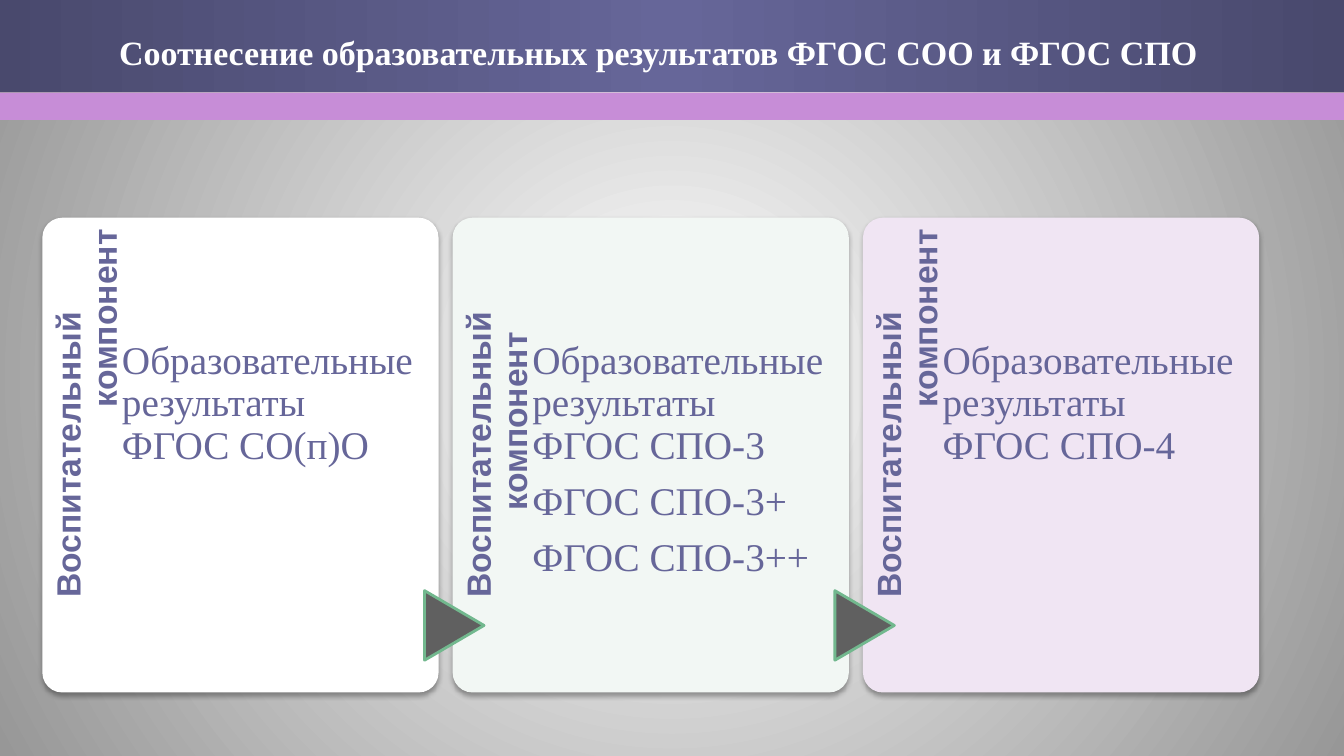
from dataclasses import dataclass
from typing import Any

from lxml import etree
from pptx import Presentation, util as u
from pptx.dml.color import RGBColor
from pptx.enum import shapes as kinds, text as txt
from pptx.oxml import parse_xml
from pptx.oxml.ns import nsdecls, qn

SLIDE_WIDTH, SLIDE_HEIGHT = u.Inches(13.33), u.Inches(7.5)
COLUMN_STEP = 30.53  # percent of the slide width


@dataclass(frozen=True)
class Theme:
    band_edge: str = "49496D"
    band_middle: str = "666699"
    strip: str = "C78DD7"
    backdrop_centre: str = "FFFFFF"
    backdrop_edge: str = "979797"
    ink: str = "666699"
    title_ink: str = "FFFFFF"
    arrow: str = "606060"
    arrow_edge: str = "72B88E"
    serif: str = "Times New Roman"
    sans: str = "Arial"
    title_size: float = 24.3
    label_size: float = 24
    body_size: float = 28


@dataclass(frozen=True)
class Box:
    """Left, top, width and height in percent of the slide."""
    left: float
    top: float
    width: float
    height: float

    def in_column(self, column: int) -> "Box":
        return Box(self.left + column * COLUMN_STEP, self.top, self.width, self.height)

    def lengths(self) -> tuple[int, int, int, int]:
        return (int(SLIDE_WIDTH * self.left / 100), int(SLIDE_HEIGHT * self.top / 100),
                int(SLIDE_WIDTH * self.width / 100), int(SLIDE_HEIGHT * self.height / 100))


@dataclass(frozen=True)
class Card:
    fill: str
    results: tuple[str, ...]
    second_word_indent: float  # inches


THEME = Theme()
BAND = Box(0, 0, 100, 12.2)
STRIP = Box(0, 12.27, 100, 3.6)
TITLE = Box(5.63, 0.7, 86.72, 12.27)
CARD = Box(3.15, 28.8, 29.48, 62.8)
LABEL = Box(-8.4, 49.47, 29.03, 10.53)
BODY = Box(9.08, 28.8, 21.98, 62.8)
ARROW = Box(0.68, 78.8, 5.18, 7.87)
HEADING = "Соотнесение образовательных результатов ФГОС СОО и ФГОС СПО"
LABEL_WORDS = ("Воспитательный", "компонент")
FIRST_WORD_INDENT = 0.11
CARDS = (
    Card("FFFFFF", ("Образовательные результаты ФГОС СО(п)О",), 2),
    Card("F2F7F4", ("Образовательные результаты ФГОС СПО-3", "ФГОС СПО-3+", "ФГОС СПО-3++"), 0.98),
    Card("F0E5F3", ("Образовательные результаты ФГОС СПО-4",), 2),
)


def set_all(target: Any, values: dict[str, Any]) -> None:
    for name, value in values.items():
        setattr(target, name, value)


def place(target: Any, box: Box) -> None:
    set_all(target, dict(zip(("left", "top", "width", "height"), box.lengths())))


def set_gradient(holder: Any, stops: dict[int, str], direction: str) -> None:
    """Swap the solid fill inside holder for a gradient."""
    colours = "".join(f'<a:gs pos="{share * 1000}"><a:srgbClr val="{colour}"/></a:gs>'
                      for share, colour in stops.items())
    gradient = parse_xml(f'<a:gradFill {nsdecls("a")} rotWithShape="1">'
                         f'<a:gsLst>{colours}</a:gsLst>{direction}</a:gradFill>')
    holder.replace(holder.find(qn("a:solidFill")), gradient)


def add_block(slide: Any, kind: Any, box: Box, fill: str) -> Any:
    block = slide.shapes.add_shape(kind, *box.lengths())
    block.fill.solid()
    block.fill.fore_color.rgb = RGBColor.from_string(fill)
    block.line.fill.background()
    block.shadow.inherit = False
    return block


def cast_shadow(block: Any) -> None:
    effects = block._element.spPr.find(qn("a:effectLst"))
    shadow = etree.SubElement(effects, qn("a:outerShdw"), blurRad=str(u.Pt(3.5)),
                              dist=str(u.Pt(2.2)), dir="5400000", rotWithShape="0")
    colour = etree.SubElement(shadow, qn("a:srgbClr"), val="000000")
    etree.SubElement(colour, qn("a:alpha"), val="32000")


def write(frame: Any, lines: tuple[str, ...], font: dict[str, Any], ink: str,
          paragraph: dict[str, Any], margins: dict[str, Any]) -> None:
    set_all(frame, {"word_wrap": True, "auto_size": txt.MSO_AUTO_SIZE.NONE} | margins)
    for number, line in enumerate(lines):
        item = frame.add_paragraph() if number else frame.paragraphs[0]
        set_all(item, paragraph)
        run = item.add_run()
        run.text = line
        set_all(run.font, font)
        run.font.color.rgb = RGBColor.from_string(ink)


def add_header(slide: Any) -> None:
    band = add_block(slide, kinds.MSO_SHAPE.RECTANGLE, BAND, THEME.band_middle)
    set_gradient(band._element.spPr,
                 {0: THEME.band_edge, 50: THEME.band_middle, 100: THEME.band_edge},
                 '<a:lin ang="0" scaled="1"/>')
    add_block(slide, kinds.MSO_SHAPE.RECTANGLE, STRIP, THEME.strip)
    title = slide.shapes.title
    slide.shapes._spTree.append(title._element)  # bring above the band
    place(title, TITLE)
    write(title.text_frame, (HEADING,),
          {"name": THEME.serif, "size": u.Pt(THEME.title_size), "bold": True}, THEME.title_ink,
          {"alignment": txt.PP_ALIGN.CENTER}, {"vertical_anchor": txt.MSO_ANCHOR.MIDDLE})


def add_label(slide: Any, card: Card, column: int) -> None:
    """Add the two words that read upwards along the card's left side."""
    label = slide.shapes.add_textbox(*LABEL.in_column(column).lengths())
    label.rotation = 270
    write(label.text_frame, LABEL_WORDS,
          {"name": THEME.sans, "size": u.Pt(THEME.label_size), "bold": True}, THEME.ink,
          {"line_spacing": 0.9, "alignment": txt.PP_ALIGN.LEFT},
          {"margin_left": 0, "margin_top": u.Inches(0.09), "margin_right": 0, "margin_bottom": 0})
    indents = (FIRST_WORD_INDENT, card.second_word_indent)
    for word, indent in zip(label.text_frame.paragraphs, indents):
        word._p.get_or_add_pPr().set("marL", str(u.Inches(indent)))


def add_card(slide: Any, card: Card, column: int) -> None:
    panel = add_block(slide, kinds.MSO_SHAPE.ROUNDED_RECTANGLE, CARD.in_column(column), card.fill)
    panel.adjustments[0] = 0.05
    cast_shadow(panel)
    add_label(slide, card, column)
    if column:
        arrow = add_block(slide, kinds.MSO_SHAPE.FLOWCHART_EXTRACT,
                          ARROW.in_column(column), THEME.arrow)
        arrow.rotation = 90
        arrow.line.color.rgb = RGBColor.from_string(THEME.arrow_edge)
        arrow.line.width = u.Pt(2)
    body = slide.shapes.add_textbox(*BODY.in_column(column).lengths())
    write(body.text_frame, card.results,
          {"name": THEME.serif, "size": u.Pt(THEME.body_size)}, THEME.ink,
          {"line_spacing": 0.9, "space_after": u.Pt(9.8)},
          {"margin_left": 0, "margin_top": u.Inches(1.22), "margin_right": 0, "margin_bottom": 0})


def main() -> None:
    deck = Presentation()
    set_all(deck, {"slide_width": SLIDE_WIDTH, "slide_height": SLIDE_HEIGHT})
    slide = deck.slides.add_slide(deck.slide_layouts.get_by_name("Title Only"))
    slide.background.fill.solid()
    set_gradient(slide._element.cSld.bg.bgPr,
                 {0: THEME.backdrop_centre, 100: THEME.backdrop_edge},
                 '<a:path path="circle"><a:fillToRect l="50000" t="50000" r="50000" b="50000"/>'
                 '</a:path>')
    add_header(slide)
    for column, card in enumerate(CARDS):
        add_card(slide, card, column)
    deck.save("out.pptx")


if __name__ == "__main__":
    main()
